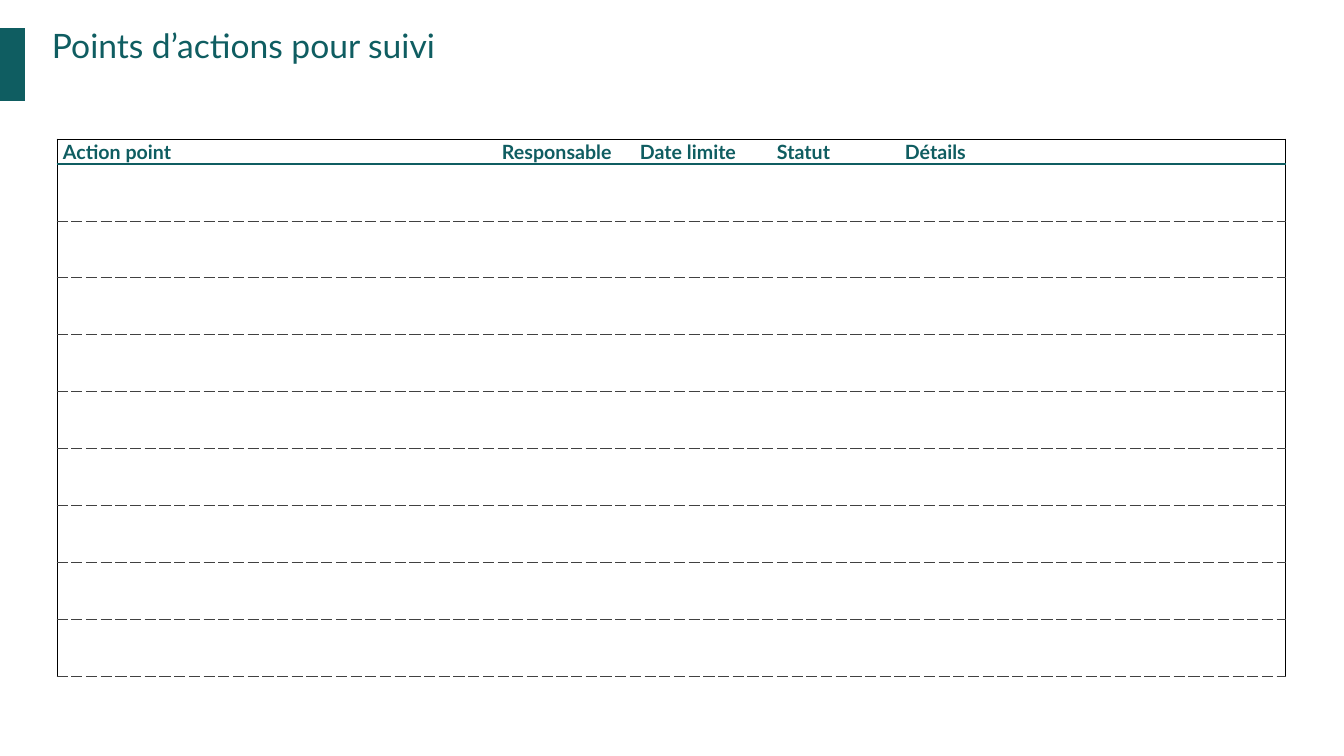
from lxml import etree
from pptx import Presentation
from pptx import util as u
from pptx.dml import color
from pptx.enum import shapes, text
from pptx.oxml import ns

PX = 914400 / 100.8
COLORS = {"teal": "0F5D61", "grey": "414141", "black": "000000"}
FONT = "Lato"
HEADS = ["Action point", "Responsable", "Date limite", "Statut", "Détails"]
WIDTHS = [439, 138, 137, 128, 387]
HEIGHTS = [25] + [57] * 9


def px(n):
    return u.Emu(round(n * PX))


def rgb(name):
    return color.RGBColor.from_string(COLORS[name])


class Page:
    def __init__(self, deck):
        self.slide = deck.slides.add_slide(deck.slide_layouts[6])
        self.items = self.slide.shapes

    def style(self, para, size, bold=False):
        for run in para.runs:
            run.font.name = FONT
            run.font.size = u.Pt(size)
            run.font.bold = bold
            run.font.color.rgb = rgb("teal")

    def bar(self, *box):
        rect = self.items.add_shape(shapes.MSO_SHAPE.RECTANGLE, *map(px, box))
        rect.shadow.inherit = False
        rect.fill.solid()
        rect.fill.fore_color.rgb = rgb("teal")
        rect.line.fill.background()

    def title(self, words, *box):
        frame = self.items.add_textbox(*map(px, box)).text_frame
        frame.word_wrap = True
        frame.margin_left = frame.margin_right = 0
        frame.margin_top = frame.margin_bottom = 0
        frame.text = words
        self.style(frame.paragraphs[0], 24)

    def edge(self, cell, side, look):
        props = cell._tc.get_or_add_tcPr()
        line = etree.SubElement(props, ns.qn("a:ln" + side))
        if look is None:
            etree.SubElement(line, ns.qn("a:noFill"))
            return
        name, width, dash = look
        line.set("w", str(u.Pt(width)))
        fill = etree.SubElement(line, ns.qn("a:solidFill"))
        etree.SubElement(fill, ns.qn("a:srgbClr"), val=COLORS[name])
        etree.SubElement(line, ns.qn("a:prstDash"), val=dash)

    def table(self, left, top):
        rows, cols = len(HEIGHTS), len(WIDTHS)
        box = map(px, (left, top, sum(WIDTHS), sum(HEIGHTS)))
        grid = self.items.add_table(rows, cols, *box).table
        grid.first_row = grid.horz_banding = False
        for col, width in zip(grid.columns, WIDTHS):
            col.width = px(width)
        outer = ("black", 0.75, "solid")
        rule = ("teal", 1, "solid")
        dash = ("grey", 0.75, "dash")
        tops = [outer, rule] + [dash] * (rows - 2)
        ends = tops[1:] + [dash]
        for r, height in enumerate(HEIGHTS):
            grid.rows[r].height = px(height)
            for c in range(cols):
                cell = grid.cell(r, c)
                cell.margin_left = cell.margin_right = px(6)
                cell.margin_top = px(1)
                cell.margin_bottom = 0
                cell.vertical_anchor = text.MSO_ANCHOR.MIDDLE
                self.edge(cell, "L", outer if c == 0 else None)
                self.edge(cell, "R", outer if c == cols - 1 else None)
                self.edge(cell, "T", tops[r])
                self.edge(cell, "B", ends[r])
                cell.fill.background()
        for c, head in enumerate(HEADS):
            frame = grid.cell(0, c).text_frame
            frame.text = head
            self.style(frame.paragraphs[0], 14, True)


def main():
    deck = Presentation()
    deck.slide_width = px(1344)
    deck.slide_height = px(756)
    page = Page(deck)
    page.table(57, 139)
    page.bar(-1, 28, 26, 73)
    page.title("Points d’actions pour suivi", 52, 25, 1265, 81)
    deck.save("out.pptx")


if __name__ == "__main__":
    main()
